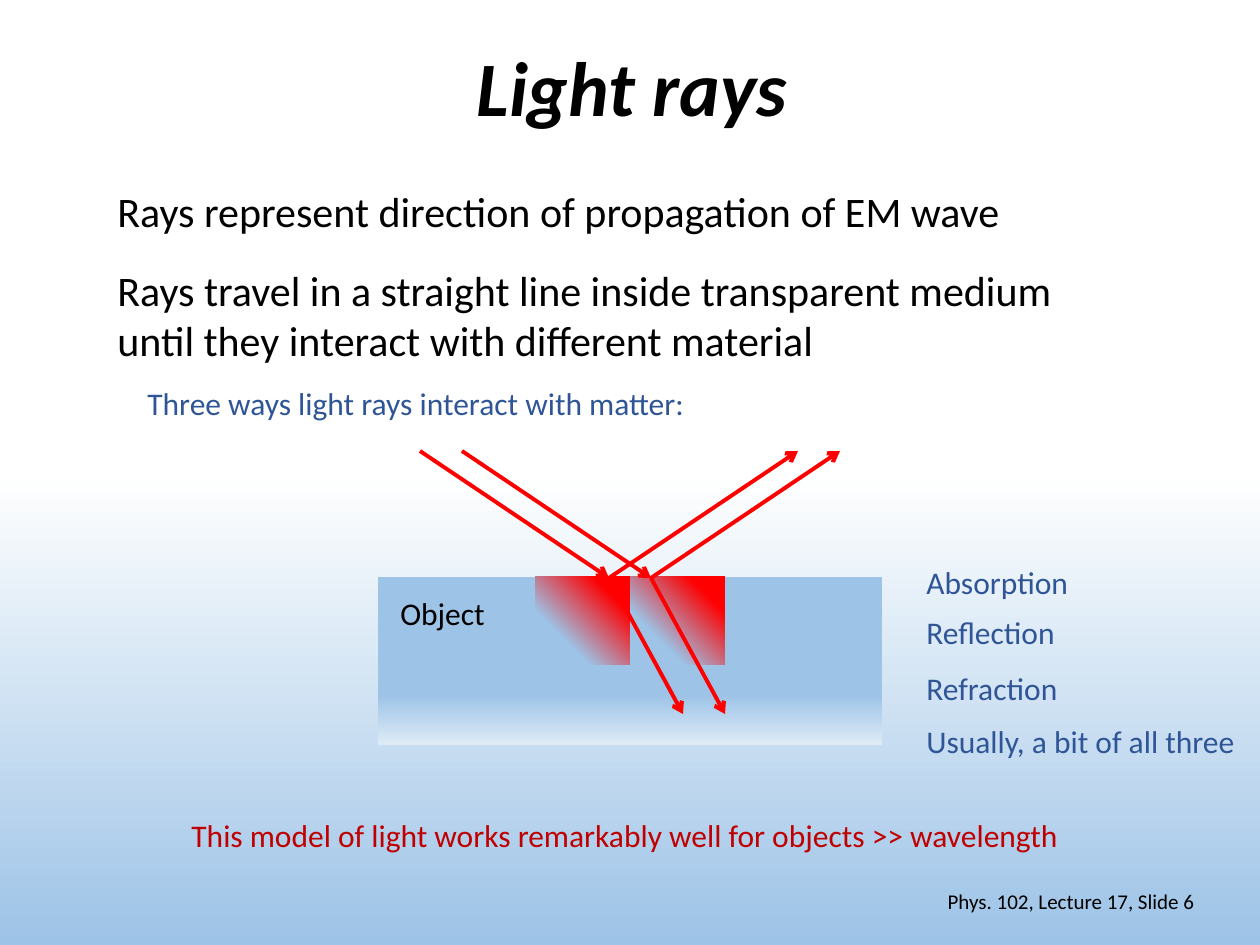
import pptx
import pptx.util
from lxml import etree
from pptx.dml.color import RGBColor
from pptx.enum.shapes import MSO_CONNECTOR, MSO_SHAPE
from pptx.enum.text import MSO_ANCHOR, PP_ALIGN
from pptx.oxml.ns import qn

EMU_PER_PX = 914400 / 126
COLORS = {
    "black": "000000", "white": "FFFFFF", "sky": "9DC3E6", "pale": "DEEBF7",
    "blue": "2F5597", "dark red": "C00000", "red": "FF0000",
}

# text, (left, top, width, height), size, color, wrap
TEXTS = [
    ("This model of light works remarkably well for objects >> wavelength",
     (179, 810, 902, 50), 18, "dark red", False),
    ("Rays represent direction of propagation of EM wave",
     (105, 179, 917, 63), 24, "black", False),
    ("Rays travel in a straight line inside transparent medium "
     "until they interact with different material",
     (105, 258, 987, 115), 24, "black", True),
    ("Three ways light rays interact with matter:",
     (135, 378, 570, 50), 18, "blue", False),
    ("Object", (388, 588, 111, 50), 18, "black", False),
]
INTERACTIONS = [
    ("Absorption", 557, 169), ("Reflection", 607, 155),
    ("Refraction", 663, 158), ("Usually, a bit of all three", 716, 338),
]
INTERACTIONS_LEFT, LABEL_HEIGHT = 914, 50

OBJECT = (378, 577, 504, 168)
ABSORBED_LEFT, ABSORBED_WIDTH, ABSORBED_HEIGHT = 535, 95, 88

# Each ray is drawn twice, the second one shifted to the right
HIT = (609, 578)
RAYS = [((420, 451), HIT), (HIT, (798, 451)), (HIT, (683, 714))]
RAY_SHIFT = 42


def px(value):
    return pptx.util.Emu(round(value * EMU_PER_PX))


def rgb(name):
    return RGBColor.from_string(COLORS[name])


def fill_gradient(fill, stops):
    """Fill from top to bottom with two (percent, color) stops."""
    fill.gradient()
    fill.gradient_angle = 270
    for stop, (percent, color) in zip(fill.gradient_stops, stops):
        stop.position = percent / 100
        stop.color.rgb = rgb(color)


def make_radial(shape):
    """Turn a linear gradient into one spreading from the top right corner."""
    linear = shape.element.spPr.find(".//" + qn("a:lin"))
    radial = etree.Element(qn("a:path"), {"path": "circle"})
    etree.SubElement(radial, qn("a:fillToRect"), l="100000", b="100000")
    linear.getparent().replace(linear, radial)


def add_text(page, text, area, size, color, wrap=False, bold=False, italic=False,
             align=PP_ALIGN.LEFT, anchor=MSO_ANCHOR.TOP, line_spacing=1.0):
    box = page.shapes.add_textbox(*map(px, area))
    box.text_frame.word_wrap = wrap
    box.text_frame.vertical_anchor = anchor
    para = box.text_frame.paragraphs[0]
    para.alignment = align
    para.line_spacing = line_spacing
    span = para.add_run()
    span.text = text
    font = {"name": "Calibri", "size": pptx.util.Pt(size), "bold": bold, "italic": italic}
    for key, value in font.items():
        setattr(span.font, key, value)
    span.font.color.rgb = rgb(color)


def add_block(page, area, stops):
    block = page.shapes.add_shape(MSO_SHAPE.RECTANGLE, *map(px, area))
    block.shadow.inherit = False
    block.line.fill.background()
    fill_gradient(block.fill, stops)
    return block


def add_ray(page, start, end):
    ray = page.shapes.add_connector(MSO_CONNECTOR.STRAIGHT, *map(px, start + end))
    ray.line.color.rgb = rgb("red")
    ray.line.width = pptx.util.Pt(2.25)
    etree.SubElement(ray.line._get_or_add_ln(), qn("a:tailEnd"), type="arrow")
    etree.SubElement(ray.element.spPr, qn("a:effectLst"))


def main():
    deck = pptx.Presentation()
    deck.slide_width, deck.slide_height = px(1260), px(945)
    page = deck.slides.add_slide(deck.slide_layouts[6])
    fill_gradient(page.background.fill, [(50, "white"), (100, "sky")])

    add_text(page, "Light rays", (89, 0, 1086, 183), 44, "black", wrap=True,
             bold=True, italic=True, align=PP_ALIGN.CENTER,
             anchor=MSO_ANCHOR.MIDDLE, line_spacing=0.9)
    add_text(page, "Phys. 102, Lecture 17, Slide 6", (890, 876, 317, 50), 12, "black",
             wrap=True, align=PP_ALIGN.RIGHT, anchor=MSO_ANCHOR.MIDDLE)

    add_block(page, OBJECT, [(70, "sky"), (100, "pale")])
    for index in range(2):
        left = ABSORBED_LEFT + index * ABSORBED_WIDTH
        glow = add_block(page, (left, OBJECT[1], ABSORBED_WIDTH, ABSORBED_HEIGHT),
                         [(19, "red"), (70, "sky")])
        make_radial(glow)
        if index == 1:
            glow.element.spPr.find(qn("a:xfrm")).set("flipH", "1")

    for start, end in RAYS:
        for shift in (0, RAY_SHIFT):
            add_ray(page, (start[0] + shift, start[1]), (end[0] + shift, end[1]))

    for text in TEXTS:
        add_text(page, *text)
    for label, top, width in INTERACTIONS:
        add_text(page, label, (INTERACTIONS_LEFT, top, width, LABEL_HEIGHT), 18, "blue")

    deck.save("out.pptx")


if __name__ == "__main__":
    main()
